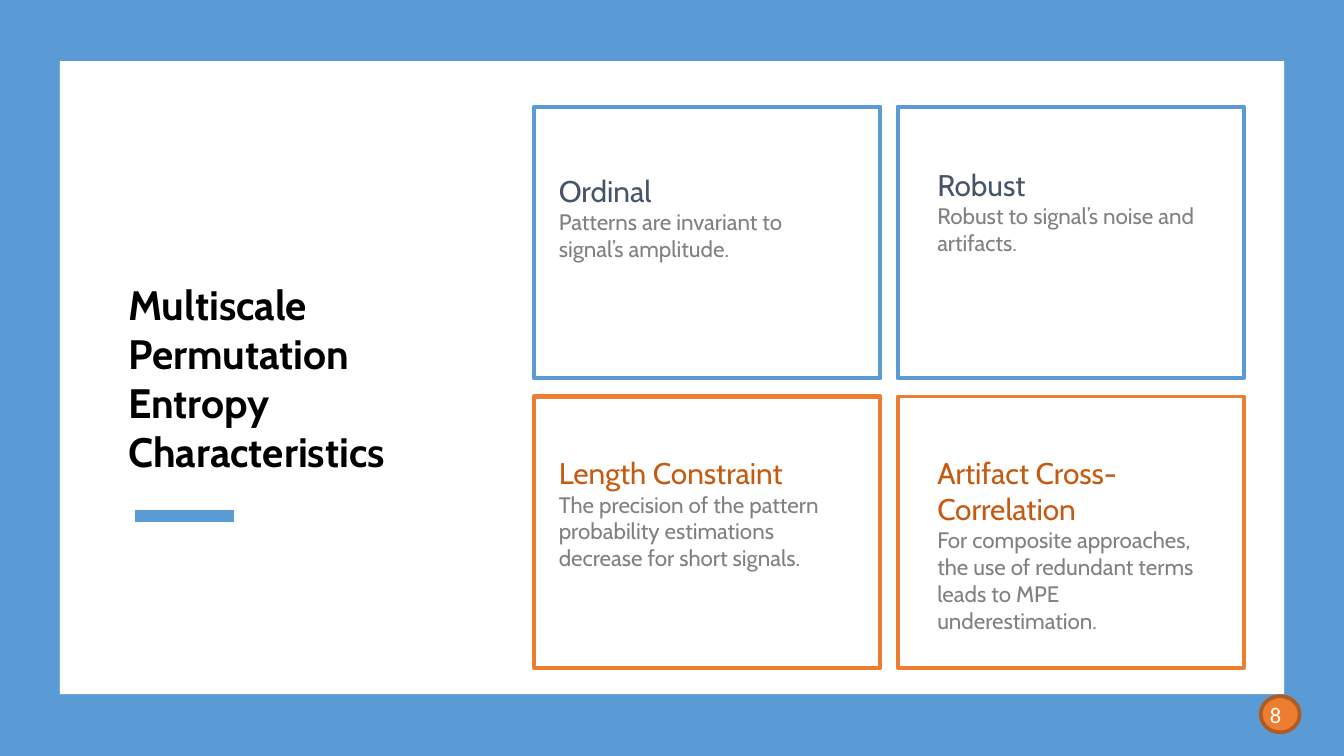
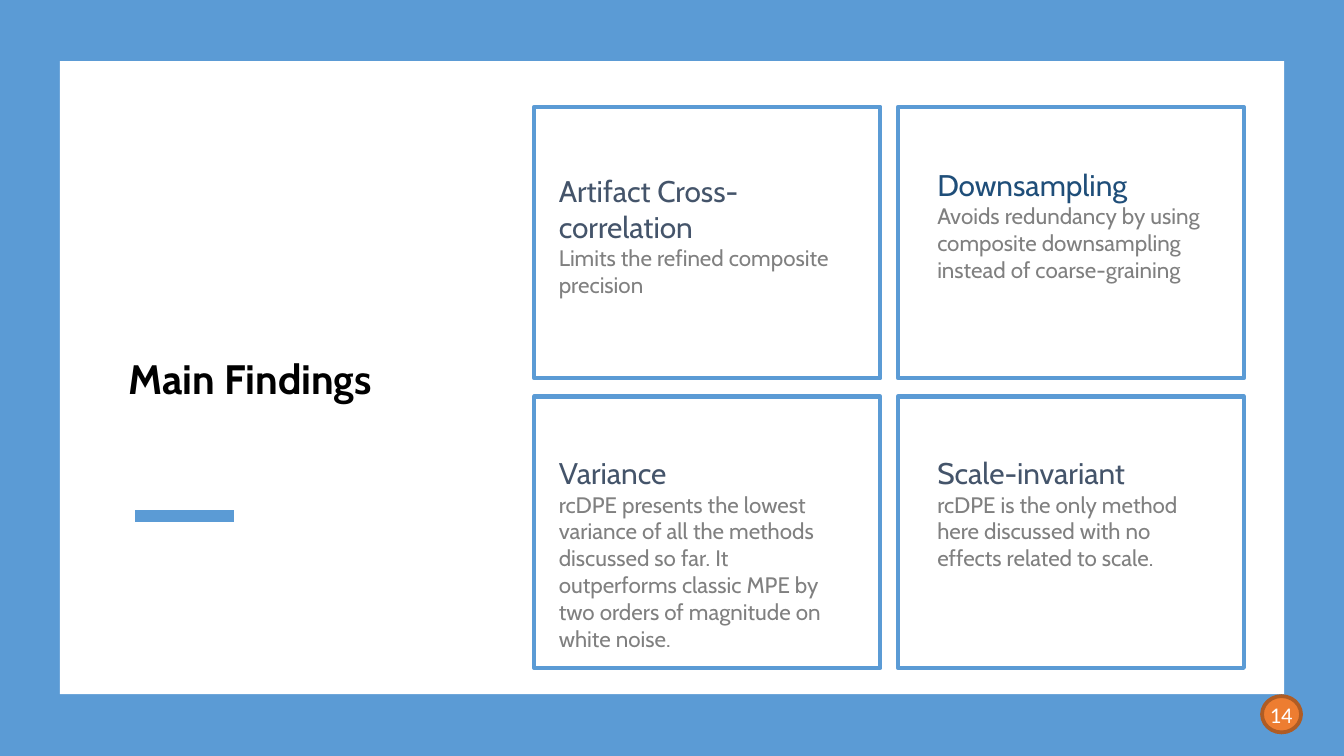
from dataclasses import dataclass

from lxml.etree import SubElement
from pptx import Presentation
from pptx.dml.color import RGBColor
from pptx.enum.shapes import MSO_CONNECTOR as Connector, MSO_SHAPE as Preset
from pptx.enum.text import MSO_ANCHOR as Anchor, MSO_AUTO_SIZE as AutoSize, PP_ALIGN as Align
from pptx.oxml.ns import qn
from pptx.util import Emu, Pt

SCALE = 4572  # EMU in one px, 200 px to the inch
TITLE_ONLY = 5
COLORS = {
    "blue": "5B9BD5",
    "orange": "ED7D31",
    "rust": "AF5C24",
    "brown": "C55A11",
    "slate": "44546A",
    "navy": "1F4E79",
    "gray": "808080",
    "white": "FFFFFF",
    "black": "000000",
}

# Card grid: outline positions by rule, text boxes by row and column
CARD_LEFT, CARD_TOP, CARD_WIDTH, CARD_HEIGHT = 795, 159, 515, 404
STEP_X, STEP_Y = 541, 431
TEXT_BOXES = (
    (812, 237, 474, 248), (1375, 228, 436, 248),
    (812, 657, 460, 248), (1375, 657, 436, 248),
)


def px(*lengths):
    return [Emu(length * SCALE) for length in lengths]


def rgb(name):
    return RGBColor.from_string(COLORS[name])


@dataclass
class Card:
    heading: str
    body: str
    outline: str = "blue"
    heading_color: str = "slate"
    filled: bool = False
    one_paragraph: bool = False


class Deck:
    """Holds the shared style and the current slide."""

    font = "Cabin"
    number_font = "Calibri"

    def __init__(self, width, height):
        self.presentation = Presentation()
        self.presentation.slide_width, self.presentation.slide_height = px(width, height)
        self.slide = None

    def start_slide(self, title):
        layout = self.presentation.slide_layouts[TITLE_ONLY]
        self.slide = self.presentation.slides.add_slide(layout)
        background = self.slide.background.fill
        background.solid()
        background.fore_color.rgb = rgb("blue")
        self.shape(Preset.RECTANGLE, (89, 91, 1822, 942), fill="white")
        self.line((201, 768, 348, 768), "blue", 6)
        self.title(title)

    def shape(self, preset, box, fill=None, outline=None, weight=2.25):
        shape = self.slide.shapes.add_shape(preset, *px(*box))
        shape.shadow.inherit = False
        if fill:
            shape.fill.solid()
            shape.fill.fore_color.rgb = rgb(fill)
        else:
            shape.fill.background()
        if outline:
            shape.line.color.rgb = rgb(outline)
            shape.line.width = Pt(weight)
        else:
            shape.line.fill.background()

    def line(self, ends, color, weight):
        connector = self.slide.shapes.add_connector(Connector.STRAIGHT, *px(*ends))
        connector.line.color.rgb = rgb(color)
        connector.line.width = Pt(weight)
        SubElement(connector.element.spPr, qn("a:effectLst"))

    def frame(self, shape, anchor):
        frame = shape.text_frame
        frame.word_wrap = True
        frame.auto_size = AutoSize.NONE
        frame.vertical_anchor = anchor
        frame.margin_left, frame.margin_top, frame.margin_right, frame.margin_bottom = px(20, 20, 20, 20)
        return frame

    def run(self, paragraph, text, size, color, font=None, bold=False):
        paragraph.alignment = Align.LEFT
        run = paragraph.add_run()
        run.text = text
        run.font.name = font or self.font
        run.font.size = Pt(size)
        run.font.bold = bold
        run.font.color.rgb = rgb(color)

    def title(self, text):
        title = self.slide.shapes.title
        title.left, title.top, title.width, title.height = px(171, 380, 556, 364)
        frame = self.frame(title, Anchor.MIDDLE)
        self.run(frame.paragraphs[0], text, 22, "black", bold=True)
        # Bring the title in front of the white panel
        title.element.getparent().append(title.element)

    def text_box(self, box, anchor=Anchor.TOP):
        return self.frame(self.slide.shapes.add_textbox(*px(*box)), anchor)

    def card(self, index, card):
        row, column = divmod(index, 2)
        box = (CARD_LEFT + column * STEP_X, CARD_TOP + row * STEP_Y, CARD_WIDTH, CARD_HEIGHT)
        fill, weight = ("white", 2) if card.filled else (None, 2.25)
        self.shape(Preset.RECTANGLE, box, fill, card.outline, weight)
        frame = self.text_box(TEXT_BOXES[index])
        paragraph = frame.paragraphs[0]
        self.run(paragraph, card.heading, 16, card.heading_color)
        if card.one_paragraph:
            paragraph.add_line_break()
        else:
            paragraph = frame.add_paragraph()
        self.run(paragraph, card.body, 12, "gray")

    def page_number(self, number, left):
        self.shape(Preset.OVAL, (left, 1036, 58, 54), "orange", "rust", 2)
        frame = self.text_box((1870, 1021, 120, 86), Anchor.MIDDLE)
        self.run(frame.paragraphs[0], str(number), 12, "white", self.number_font)


# Slide content: title, page number, left edge of its badge, cards
SLIDES = (
    ("Multiscale Permutation Entropy Characteristics", 8, 1876, (
        Card("Ordinal", "Patterns are invariant to signal’s amplitude.", one_paragraph=True),
        Card("Robust", "Robust to signal’s noise and artifacts.", one_paragraph=True),
        Card("Length Constraint",
             "The precision of the pattern probability estimations decrease for short signals.",
             "orange", "brown"),
        Card("Artifact Cross-Correlation",
             "For composite approaches, the use of redundant terms leads to MPE underestimation.",
             "orange", "brown", filled=True, one_paragraph=True),
    )),
    ("Main Findings", 14, 1878, (
        Card("Artifact Cross-correlation", "Limits the refined composite precision",
             one_paragraph=True),
        Card("Downsampling",
             "Avoids redundancy by using composite downsampling instead of coarse-graining",
             heading_color="navy", filled=True),
        Card("Variance",
             "rcDPE presents the lowest variance of all the methods discussed so far. "
             "It outperforms classic MPE by two orders of magnitude on white noise."),
        Card("Scale-invariant",
             "rcDPE is the only method here discussed with no effects related to scale."),
    )),
)


def main():
    deck = Deck(2000, 1125)
    for title, number, badge_left, cards in SLIDES:
        deck.start_slide(title)
        for index, card in enumerate(cards):
            deck.card(index, card)
        deck.page_number(number, badge_left)
    deck.presentation.save("out.pptx")


if __name__ == "__main__":
    main()
